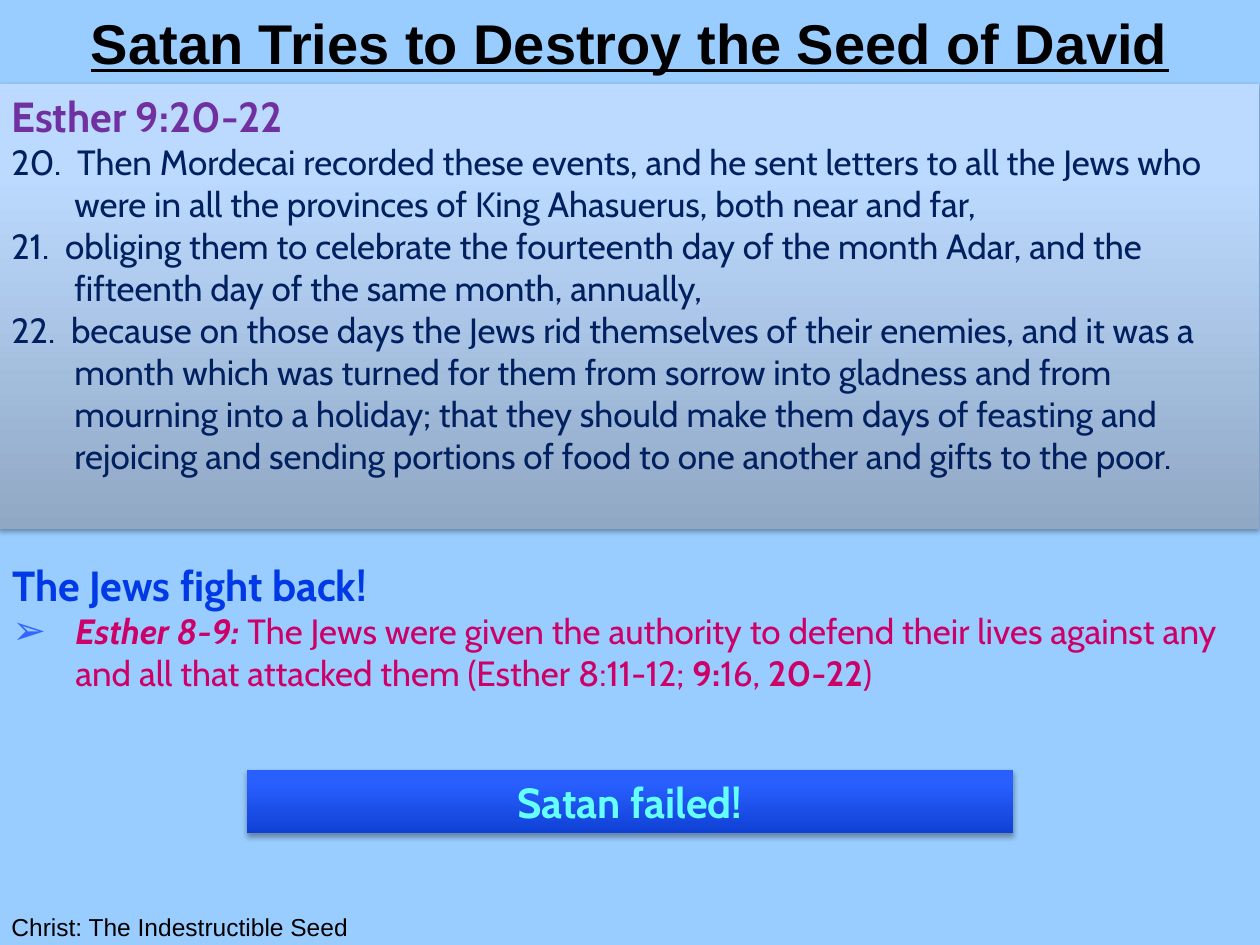
from lxml import etree
from pptx import Presentation
from pptx import util as u
from pptx.dml.color import RGBColor
from pptx.enum import shapes, text
from pptx.oxml import ns

PX_PER_INCH = 126
INDENT = 63
VERSES = [
    "20.  Then Mordecai recorded these events, and he sent letters to all the Jews who "
    "were in all the provinces of King Ahasuerus, both near and far,",
    "21.  obliging them to celebrate the fourteenth day of the month Adar, and the "
    "fifteenth day of the same month, annually,",
    "22.  because on those days the Jews rid themselves of their enemies, and it was a "
    "month which was turned for them from sorrow into gladness and from mourning into a "
    "holiday; that they should make them days of feasting and rejoicing and sending "
    "portions of food to one another and gifts to the poor.",
]


def px(length):
    return u.Emu(round(length * u.Inches(1) / PX_PER_INCH))


def colour(value):
    return RGBColor.from_string(value)


def add_child(parent, tag, **attributes):
    child = etree.SubElement(parent, ns.qn(tag))
    for name, value in attributes.items():
        child.set(name, str(value))
    return child


def add_text_box(page, box, anchor=text.MSO_ANCHOR.TOP):
    frame = page.shapes.add_textbox(*map(px, box)).text_frame
    frame.word_wrap = True
    frame.vertical_anchor = anchor
    return frame


def add_panel(page, box, stops):
    """Rectangle with an upward gradient and a soft shadow below."""
    panel = page.shapes.add_shape(shapes.MSO_SHAPE.RECTANGLE, *map(px, box))
    panel.line.fill.background()
    panel.shadow.inherit = False
    properties = panel._element.spPr

    gradient = etree.Element(ns.qn("a:gradFill"), rotWithShape="1")
    stop_list = add_child(gradient, "a:gsLst")
    for position, value in zip((0, 80, 100), stops):
        stop = add_child(stop_list, "a:gs", pos=position * 1000)
        add_child(stop, "a:srgbClr", val=value)
    add_child(gradient, "a:lin", ang=270 * 60000, scaled=0)
    properties.find(ns.qn("a:prstGeom")).addnext(gradient)

    effects = properties.find(ns.qn("a:effectLst"))
    shadow = add_child(effects, "a:outerShdw", blurRad=u.Pt(3.1), dist=u.Pt(1.8),
                       dir=90 * 60000, rotWithShape=0)
    add_child(add_child(shadow, "a:srgbClr", val="000000"), "a:alpha", val=35000)

    frame = panel.text_frame
    frame.word_wrap = True
    frame.vertical_anchor = text.MSO_ANCHOR.TOP
    return frame


def add_span(para, words, size, value, font="Cabin", bold=False, italic=False):
    span = para.add_run()
    span.text = words
    span.font.name = font
    span.font.size = u.Pt(size)
    span.font.bold = bold
    span.font.italic = italic
    span.font.color.rgb = colour(value)
    return span


def hang(para, align=text.PP_ALIGN.LEFT):
    para.alignment = align
    properties = para._p.get_or_add_pPr()
    properties.set("marL", str(px(INDENT)))
    properties.set("indent", str(-px(INDENT)))
    return properties


def add_bullet(properties, mark, value, percent):
    add_child(add_child(properties, "a:buClr"), "a:srgbClr", val=value)
    add_child(properties, "a:buSzPct", val=percent * 1000)
    add_child(properties, "a:buFont", typeface="Arial")
    add_child(properties, "a:buChar", char=mark)


def build_title(page, box):
    para = add_text_box(page, box, text.MSO_ANCHOR.MIDDLE).paragraphs[0]
    para.alignment = text.PP_ALIGN.CENTER
    span = add_span(para, "Satan Tries to Destroy the Seed of David", 32, "000000",
                    font="Arial", bold=True)
    span.font.underline = True


def build_footer(page, box):
    para = add_text_box(page, box).paragraphs[0]
    add_span(para, "Christ: The Indestructible Seed", 14, "000000", font="Arial")


def build_passage(page, box):
    frame = add_panel(page, box, ("91A8C4", "BCDAFF", "BEDBFF"))
    heading = frame.paragraphs[0]
    hang(heading)
    add_span(heading, "Esther 9:20-22", 24, "7030A0", bold=True)
    for verse in VERSES:
        para = frame.add_paragraph()
        hang(para)
        add_span(para, verse, 20, "002060")


def build_response(page, box):
    frame = add_text_box(page, box)
    heading = frame.paragraphs[0]
    hang(heading)
    add_span(heading, "The Jews fight back!", 24, "0039E5", bold=True)

    point = frame.add_paragraph()
    add_bullet(hang(point), "➢", "3366FF", 115)
    add_span(point, "Esther 8-9: ", 20, "CC0066", bold=True, italic=True)
    for words, bold in (
        ("The Jews were given the authority to defend their lives against any "
         "and all that attacked them (Esther 8:11-12; ", False),
        ("9:", True), ("16, ", False), ("20-22", True), (")", False),
    ):
        add_span(point, words, 20, "CC0066", bold=bold)


def build_outcome(page, box):
    para = add_panel(page, box, ("0F41D5", "295FFF", "2B60FF")).paragraphs[0]
    hang(para, text.PP_ALIGN.CENTER)
    add_span(para, "Satan failed!", 24, "66FFFF", bold=True)


def main():
    deck = Presentation()
    deck.slide_width, deck.slide_height = px(1260), px(945)
    page = deck.slides.add_slide(deck.slide_layouts[6])
    page.background.fill.solid()
    page.background.fill.fore_color.rgb = colour("99CCFF")

    # Boxes are left, top, width, height
    build_title(page, (0, 0, 1260, 84))
    build_footer(page, (-1, 906, 369, 42))
    build_response(page, (0, 553, 1260, 149))
    build_passage(page, (-1, 84, 1260, 445))
    build_outcome(page, (247, 770, 766, 63))
    deck.save("out.pptx")


if __name__ == "__main__":
    main()
